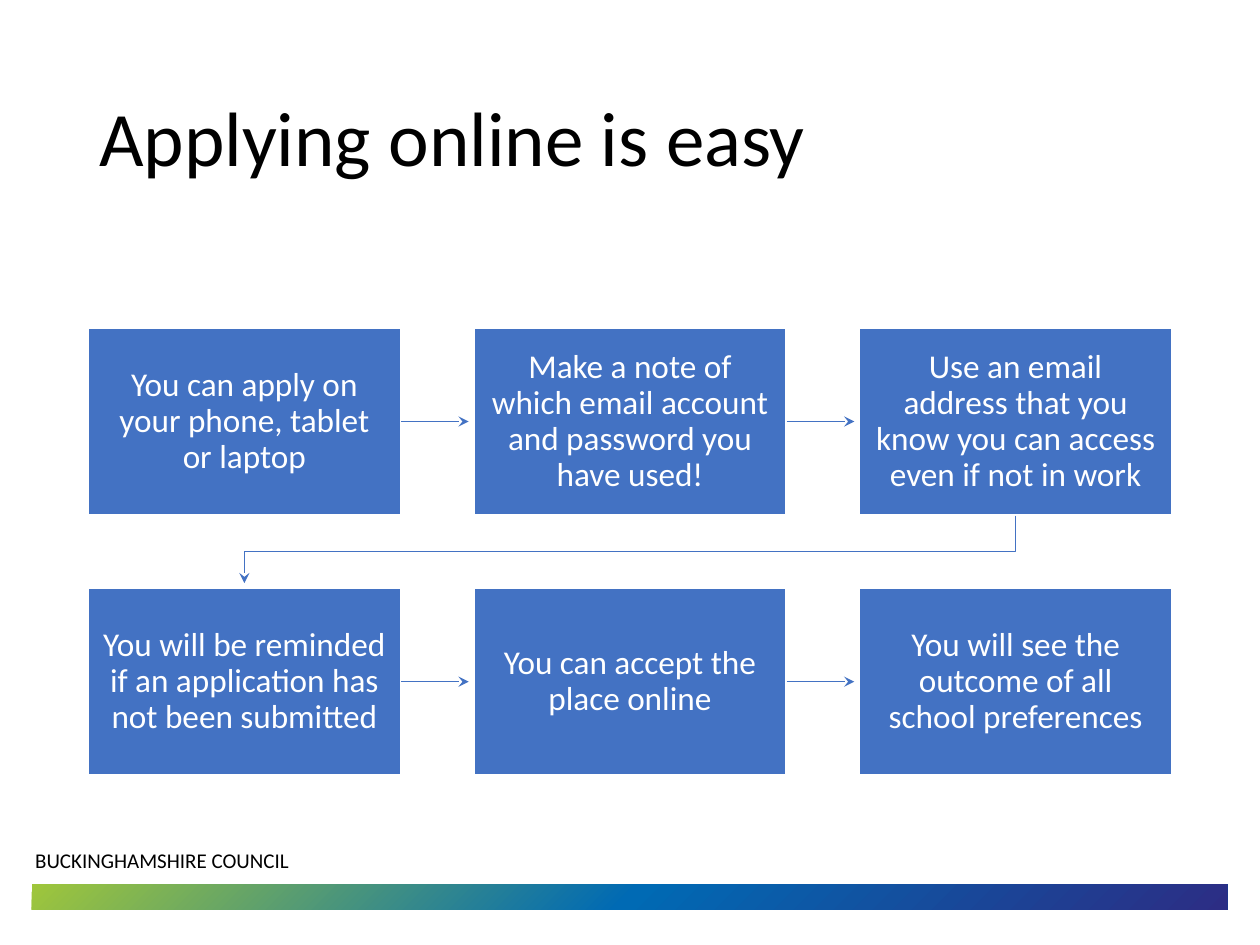
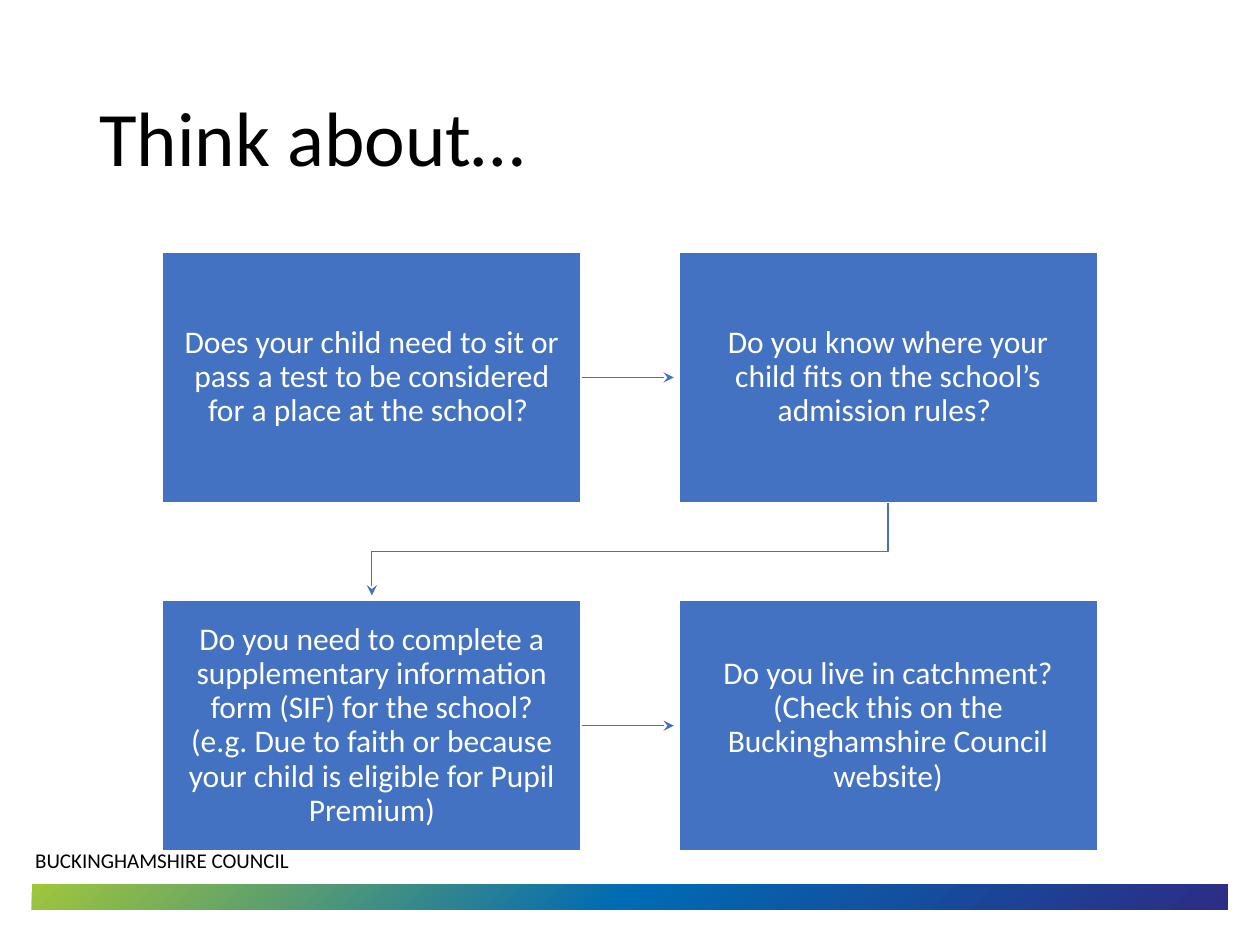
"""Build two slides of school-application steps, each a snaking flow of boxes."""
from dataclasses import dataclass
from itertools import pairwise

from lxml import etree
from pptx import Presentation
from pptx.dml.color import RGBColor
from pptx.enum.shapes import MSO_CONNECTOR, MSO_SHAPE
from pptx.enum.text import MSO_ANCHOR, PP_ALIGN
from pptx.oxml.ns import qn
from pptx.util import Cm, Pt

RECT = MSO_SHAPE.RECTANGLE
STRAIGHT = MSO_CONNECTOR.STRAIGHT
TOP, MIDDLE = MSO_ANCHOR.TOP, MSO_ANCHOR.MIDDLE
LEFT, CENTER = PP_ALIGN.LEFT, PP_ALIGN.CENTER
RIGHT_SIDE = 3
SLIDE_W, SLIDE_H = 25.4, 19.05
FLOW_CENTER_Y = 11.12
BOX_RATIO, GAP_RATIO = 0.6, 0.23
ARROW_CLEARANCE = 0.09


@dataclass(frozen=True)
class Theme:
    font: str = "Calibri"
    text: str = "000000"
    light: str = "FFFFFF"
    accent: str = "4372C3"
    band: tuple = ("2C2D84", "006AB4", "9FC63B")
    title_size: float = 44
    footer_size: float = 12
    box_border: float = 1.5
    arrow_width: float = 0.75


class Deck:
    def __init__(self, theme):
        self.theme = theme
        self.prs = Presentation()
        self.prs.slide_width, self.prs.slide_height = Cm(SLIDE_W), Cm(SLIDE_H)
        self.s = None

    def add_slide(self, title):
        self.s = self.prs.slides.add_slide(self.prs.slide_layouts[6])
        self.band(0.64, 17.83, 24.1, 0.51)
        self.text_box("BUCKINGHAMSHIRE COUNCIL", 0.46, 16.97, 12.22, 0.76,
                      self.theme.footer_size, TOP)
        self.text_box(title, 1.75, 1.02, 21.9, 3.68, self.theme.title_size, MIDDLE, 0.9)

    def band(self, x, y, w, h):
        sp = self.s.shapes.add_shape(RECT, Cm(x), Cm(y), Cm(w), Cm(h))
        sp.shadow.inherit = False
        sp.line.fill.background()
        sp.fill.gradient()
        grad = sp._element.spPr.find(qn("a:gradFill"))
        for child in list(grad):
            grad.remove(child)
        stops = etree.SubElement(grad, qn("a:gsLst"))
        for i, color in enumerate(self.theme.band):
            stop = etree.SubElement(stops, qn("a:gs"), pos=str(i * 50000))
            etree.SubElement(stop, qn("a:srgbClr"), val=color)
        circle = etree.SubElement(grad, qn("a:path"), {"path": "circle"})
        etree.SubElement(circle, qn("a:fillToRect"), l="100000", t="100000")

    def set_text(self, sp, text, size, color, anchor, align, spacing):
        tf = sp.text_frame
        tf.word_wrap = True
        tf.vertical_anchor = anchor
        p = tf.paragraphs[0]
        p.text = text
        p.alignment = align
        p.line_spacing = spacing
        p.font.name, p.font.size = self.theme.font, Pt(size)
        p.font.color.rgb = RGBColor.from_string(color)

    def text_box(self, text, x, y, w, h, size, anchor, spacing=1.0):
        sp = self.s.shapes.add_textbox(Cm(x), Cm(y), Cm(w), Cm(h))
        self.set_text(sp, text, size, self.theme.text, anchor, LEFT, spacing)

    def box(self, text, x, y, w, h, size):
        sp = self.s.shapes.add_shape(RECT, Cm(x), Cm(y), Cm(w), Cm(h))
        sp.shadow.inherit = False
        sp.fill.solid()
        sp.fill.fore_color.rgb = RGBColor.from_string(self.theme.accent)
        sp.line.color.rgb = RGBColor.from_string(self.theme.light)
        sp.line.width = Pt(self.theme.box_border)
        tf = sp.text_frame
        tf.margin_left = tf.margin_right = Cm(w * 0.05)
        tf.margin_top = tf.margin_bottom = Cm(w * 0.05)
        self.set_text(sp, text, size, self.theme.light, MIDDLE, CENTER, 0.9)
        return sp

    def style_arrow(self, sp):
        sp.line.color.rgb = RGBColor.from_string(self.theme.accent)
        sp.line.width = Pt(self.theme.arrow_width)
        ln = sp._element.spPr.find(qn("a:ln"))
        etree.SubElement(ln, qn("a:tailEnd"), type="stealth")

    def arrow_across(self, start, end):
        y = start.top + start.height // 2
        tip = end.left - Cm(ARROW_CLEARANCE)
        cx = self.s.shapes.add_connector(STRAIGHT, start.left + start.width, y, tip, y)
        cx.begin_connect(start, RIGHT_SIDE)
        self.style_arrow(cx)
        etree.SubElement(cx._element.spPr, qn("a:effectLst"))

    def arrow_to_next_row(self, start, end):
        x1, x2 = (sp.left + sp.width // 2 for sp in (start, end))
        y1 = start.top + start.height
        turn = (y1 + end.top) // 2
        fb = self.s.shapes.build_freeform(x1, y1)
        fb.add_line_segments(
            [(x1, turn), (x2, turn), (x2, end.top - Cm(ARROW_CLEARANCE))], close=False)
        sp = fb.convert_to_shape()
        sp.shadow.inherit = False
        sp.fill.background()
        self.style_arrow(sp)

    def flow(self, steps, cols, w, size):
        h, gap = w * BOX_RATIO, w * GAP_RATIO
        rows = -(-len(steps) // cols)
        x0 = (SLIDE_W - cols * w - (cols - 1) * gap) / 2
        y0 = FLOW_CENTER_Y - (rows * h + (rows - 1) * gap) / 2
        boxes = []
        for i, step in enumerate(steps):
            row, col = divmod(i, cols)
            boxes.append(self.box(step, x0 + col * (w + gap), y0 + row * (h + gap),
                                  w, h, size))
        for start, end in pairwise(boxes):
            if start.top == end.top:
                self.arrow_across(start, end)
            else:
                self.arrow_to_next_row(start, end)


def main():
    deck = Deck(Theme())
    deck.add_slide("Applying online is easy")
    deck.flow([
        "You can apply on your phone, tablet or laptop",
        "Make a note of which email account and password you have used!",
        "Use an email address that you know you can access even if not in work",
        "You will be reminded if an application has not been submitted",
        "You can accept the place online",
        "You will see the outcome of all school preferences",
    ], cols=3, w=6.32, size=19)

    deck.add_slide("Think about…")
    deck.flow([
        "Does your child need to sit or pass a test to be considered for a place "
        "at the school? ",
        "Do you know where your child fits on the school’s admission rules? ",
        "Do you need to complete a supplementary information form (SIF) for the school? "
        "(e.g. Due to faith or because your child is eligible for Pupil Premium)",
        "Do you live in catchment? (Check this on the Buckinghamshire Council website)",
    ], cols=2, w=8.46, size=18)
    deck.prs.save("out.pptx")


if __name__ == "__main__":
    main()
